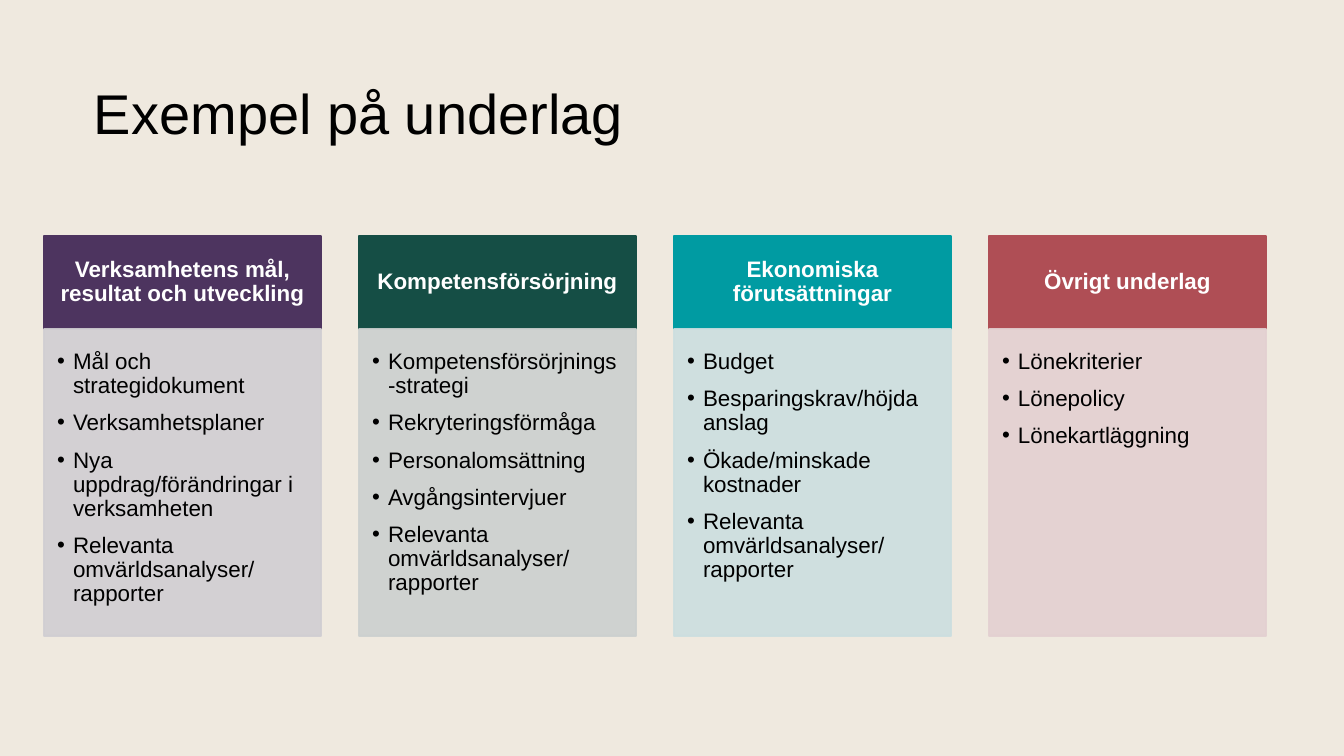
from dataclasses import dataclass

from lxml.etree import SubElement
from pptx import Presentation
from pptx.dml.color import RGBColor
from pptx.enum.shapes import MSO_SHAPE
from pptx.enum.text import MSO_ANCHOR, MSO_AUTO_SIZE, PP_ALIGN
from pptx.oxml.ns import qn
from pptx.util import Emu, Pt

EMU_PER_PX = 914400 / 134.4


@dataclass(frozen=True)
class Theme:
    font: str = "Arial"
    background: str = "EFE9DF"
    ink: str = "000000"
    heading_ink: str = "FFFFFF"
    title_size: int = 30
    text_size: int = 12
    line_spacing: float = 0.9
    list_opacity: int = 90


THEME = Theme()

COLUMN_LEFT, COLUMN_PITCH, COLUMN_WIDTH = 44, 315, 277
HEADING_TOP, HEADING_HEIGHT, LIST_HEIGHT = 236, 93, 307
HEADING_INSETS = (11, 5, 11, 5)
LIST_INSETS = (13, 21, 13, 7)
WIDE_LIST_INSETS = (13, 21, 5, 7)
BULLET_INDENT = 16

COLUMNS = [
    ("Verksamhetens mål, resultat och utveckling", "4D345F", "D0CED2", WIDE_LIST_INSETS, [
        "Mål och strategidokument",
        "Verksamhetsplaner",
        "Nya uppdrag/förändringar i verksamheten",
        "Relevanta omvärldsanalyser/ rapporter",
    ]),
    ("Kompetensförsörjning", "154E45", "CCD0CF", LIST_INSETS, [
        "Kompetensförsörjnings-strategi",
        "Rekryteringsförmåga",
        "Personalomsättning",
        "Avgångsintervjuer",
        "Relevanta omvärldsanalyser/ rapporter",
    ]),
    ("Ekonomiska förutsättningar", "009BA2", "CCDEE0", LIST_INSETS, [
        "Budget",
        "Besparingskrav/höjda anslag",
        "Ökade/minskade kostnader",
        "Relevanta omvärldsanalyser/ rapporter",
    ]),
    ("Övrigt underlag", "AF4E55", "E3D0D1", LIST_INSETS, [
        "Lönekriterier",
        "Lönepolicy",
        "Lönekartläggning",
    ]),
]


def px(length):
    return Emu(round(length * EMU_PER_PX))


def add_bullet(paragraph):
    paragraph.level = 1
    properties = paragraph._p.get_or_add_pPr()
    properties.set("marL", str(px(BULLET_INDENT)))
    properties.set("indent", str(-px(BULLET_INDENT)))
    SubElement(properties, qn("a:buFont"), typeface=THEME.font)
    SubElement(properties, qn("a:buChar"), char="•")


def write_text(frame, lines, *, size=THEME.text_size, color=THEME.ink, bold=False,
               align=PP_ALIGN.LEFT, anchor=MSO_ANCHOR.TOP, insets=(0, 0, 0, 0),
               bulleted=False, before=0, after=0):
    frame.word_wrap = True
    frame.auto_size = MSO_AUTO_SIZE.NONE
    frame.vertical_anchor = anchor
    (frame.margin_left, frame.margin_top,
     frame.margin_right, frame.margin_bottom) = map(px, insets)
    for index, line in enumerate(lines):
        paragraph = frame.add_paragraph() if index else frame.paragraphs[0]
        if bulleted:
            add_bullet(paragraph)
        paragraph.alignment = align
        paragraph.line_spacing = THEME.line_spacing
        paragraph.space_before = Pt(before if index else 0)
        paragraph.space_after = Pt(after)
        run = paragraph.add_run()
        run.text = line
        run.font.name = THEME.font
        run.font.size = Pt(size)
        run.font.bold = bold
        run.font.color.rgb = RGBColor.from_string(color)


def add_panel(group, left, top, height, color, opacity=100):
    panel = group.shapes.add_shape(
        MSO_SHAPE.RECTANGLE, px(left), px(top), px(COLUMN_WIDTH), px(height))
    panel.shadow.inherit = False
    panel.fill.solid()
    panel.line.width = Pt(1)
    for paint in (panel.fill.fore_color, panel.line.color):
        paint.rgb = RGBColor.from_string(color)
    if opacity < 100:
        for tint in panel._element.spPr.iter(qn("a:srgbClr")):
            SubElement(tint, qn("a:alpha"), val=str(opacity * 1000))
    return panel.text_frame


def add_column(group, left, heading, heading_color, list_color, list_insets, items):
    heading_frame = add_panel(group, left, HEADING_TOP, HEADING_HEIGHT, heading_color)
    write_text(heading_frame, [heading], color=THEME.heading_ink, bold=True,
               align=PP_ALIGN.CENTER, anchor=MSO_ANCHOR.MIDDLE, insets=HEADING_INSETS)
    list_frame = add_panel(group, left, HEADING_TOP + HEADING_HEIGHT, LIST_HEIGHT,
                           list_color, THEME.list_opacity)
    write_text(list_frame, items, insets=list_insets, bulleted=True, before=6, after=1)


def add_title(slide, text):
    title = slide.shapes.title
    title.left, title.top, title.width, title.height = map(px, (94, 42, 1102, 148))
    write_text(title.text_frame, [text], size=THEME.title_size, anchor=MSO_ANCHOR.MIDDLE)


def main():
    presentation = Presentation()
    presentation.slide_width, presentation.slide_height = px(1344), px(756)
    slide = presentation.slides.add_slide(presentation.slide_layouts[5])
    slide.background.fill.solid()
    slide.background.fill.fore_color.rgb = RGBColor.from_string(THEME.background)
    add_title(slide, "Exempel på underlag")
    columns = slide.shapes.add_group_shape()
    for index, column in enumerate(COLUMNS):
        add_column(columns, COLUMN_LEFT + index * COLUMN_PITCH, *column)
    presentation.save("out.pptx")


if __name__ == "__main__":
    main()
